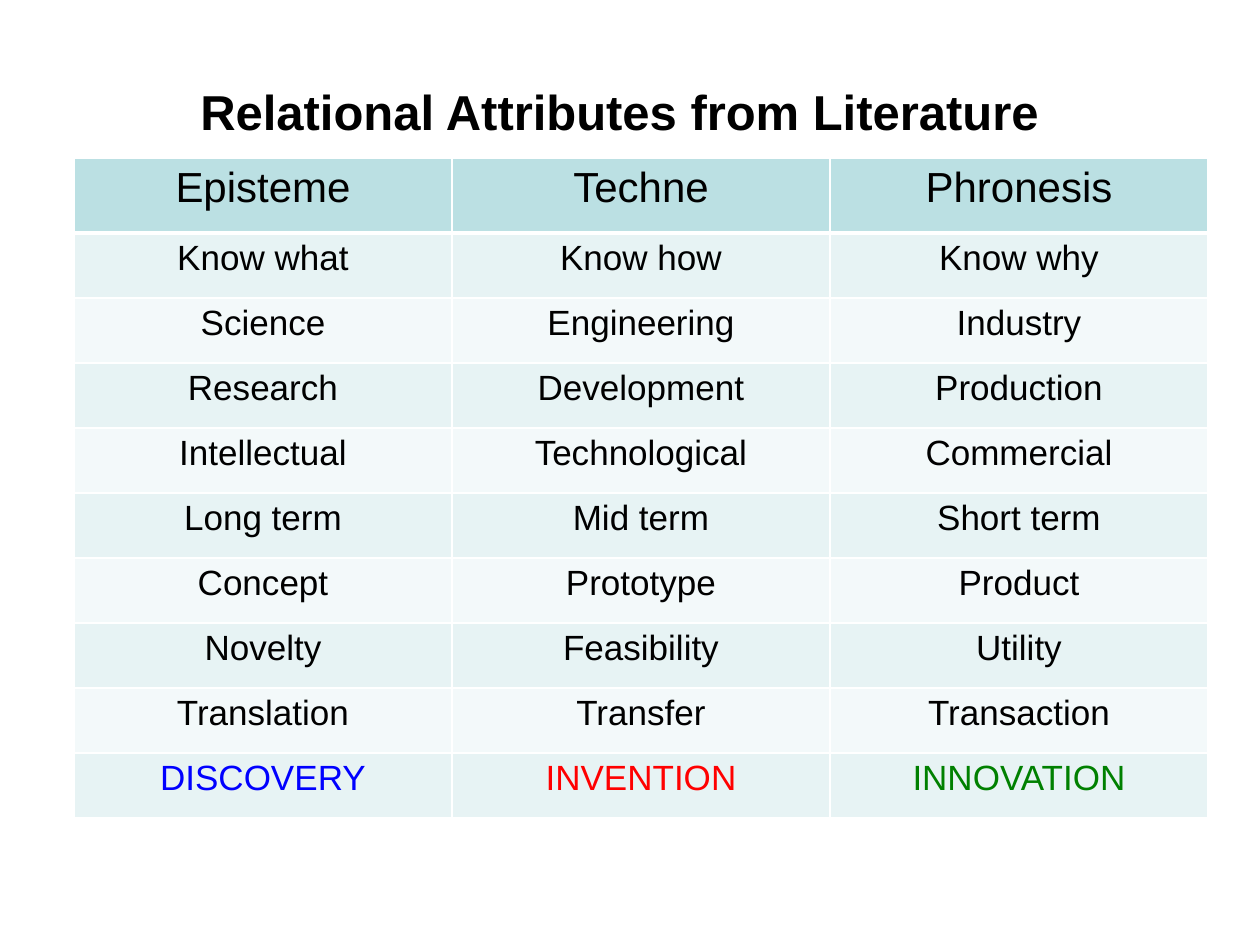
from lxml.etree import SubElement
from pptx import Presentation
from pptx.dml.color import RGBColor
from pptx.enum.text import MSO_ANCHOR, PP_ALIGN
from pptx.oxml.ns import qn
from pptx.util import Emu, Pt

SCALE = 914400 / 126
COLORS = {
    "text": "000000", "line": "FFFFFF", "head": "BBE0E3",
    "odd": "E7F3F4", "even": "F3F9FA",
    "blue": "0000FF", "red": "FF0000", "green": "008000",
}
ROWS = [
    ("Episteme", "Techne", "Phronesis"),
    ("Know what", "Know how", "Know why"),
    ("Science", "Engineering", "Industry"),
    ("Research", "Development", "Production"),
    ("Intellectual", "Technological", "Commercial"),
    ("Long term", "Mid term", "Short term"),
    ("Concept", "Prototype", "Product"),
    ("Novelty", "Feasibility", "Utility"),
    ("Translation", "Transfer", "Transaction"),
    ("DISCOVERY", "INVENTION", "INNOVATION"),
]
LAST = ("blue", "red", "green")


def px(n):
    return Emu(round(n * SCALE))


def rgb(name):
    return RGBColor.from_string(COLORS[name])


def write(frame, text, size=20, color="text", bold=False, after=0):
    par = frame.paragraphs[0]
    par.alignment = PP_ALIGN.CENTER
    par.space_before, par.space_after = Pt(0), Pt(after)
    run = par.add_run()
    run.text = text
    font = run.font
    font.name, font.size, font.bold = "Arial", Pt(size), bold
    font.color.rgb = rgb(color)


def border(cell, top=1, bottom=1):
    """Draw the four cell edges, with widths in points."""
    props = cell._tc.get_or_add_tcPr()
    for side, width in zip("LRTB", (1, 1, top, bottom)):
        line = SubElement(props, qn(f"a:ln{side}"), w=str(Pt(width)))
        fill = SubElement(line, qn("a:solidFill"))
        SubElement(fill, qn("a:srgbClr"), val=COLORS["line"])


def add_title(slide, text, x, y, w, h):
    title = slide.shapes.title
    title.left, title.top, title.width, title.height = map(px, (x, y, w, h))
    frame = title.text_frame
    frame.word_wrap = True
    frame.vertical_anchor = MSO_ANCHOR.MIDDLE
    write(frame, text, size=28, bold=True, after=3)


def add_grid(slide, x, y, w, head, body):
    """Place the table; head and body are row heights."""
    count, width = len(ROWS), len(ROWS[0])
    high = head + body * (count - 1)
    table = slide.shapes.add_table(
        count, width, px(x), px(y), px(w), px(high)).table
    for col in table.columns:
        col.width = px(w / width)
    for r, row in enumerate(ROWS):
        table.rows[r].height = px(body if r else head)
        shade = ("even", "odd")[r % 2] if r else "head"
        for c, text in enumerate(row):
            cell = table.cell(r, c)
            border(cell, top=3 if r == 1 else 1, bottom=1 if r else 3)
            cell.fill.solid()
            cell.fill.fore_color.rgb = rgb(shade)
            write(cell.text_frame, text, size=20 if r else 24,
                  color=LAST[c] if r == count - 1 else "text")


def main():
    deck = Presentation()
    deck.slide_width, deck.slide_height = px(1260), px(945)
    slide = deck.slides.add_slide(deck.slide_layouts[5])
    add_title(slide, "Relational Attributes from Literature", 63, 53, 1113, 116)
    add_grid(slide, 74, 158, 1134, head=75, body=65)
    deck.save("out.pptx")


if __name__ == "__main__":
    main()
